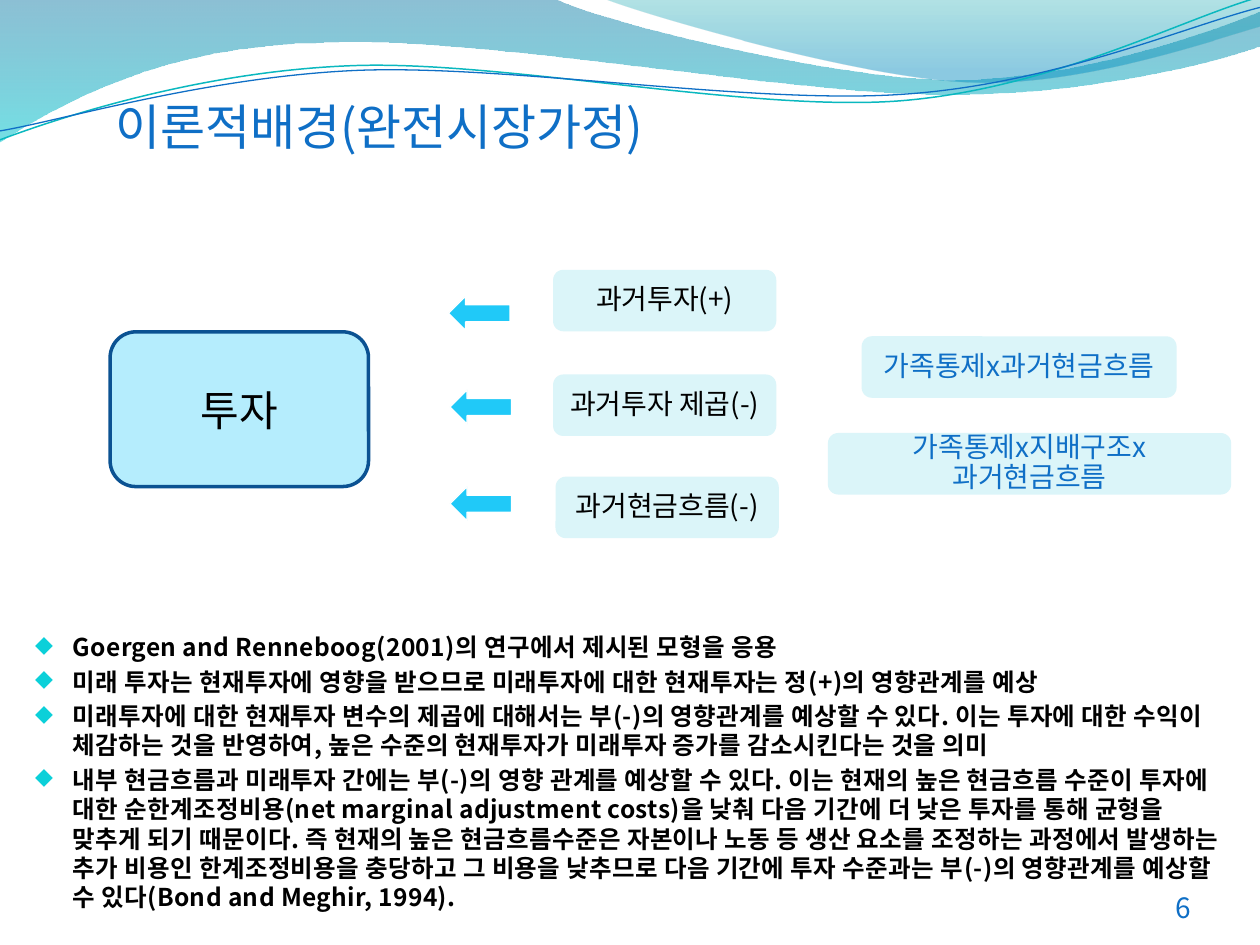
from lxml import etree
from pptx import Presentation
from pptx import util as u
from pptx.dml.color import RGBColor
from pptx.enum import shapes, text
from pptx.oxml.ns import qn

FONT = "Noto Sans CJK KR"
BLUE = "0F6FC6"
BLACK = "000000"
PALE = "DBF5F9"

UPPER_WAVE = (0, -0.03), [
    [(11.18, -0.03)],
    [(12.09, 0.43), (16.87, 1.6), (19.25, 1.6)],
    [(21.67, 1.6), (24.33, 0.66), (25.4, 0.23)],
    [(25.43, 0.91)],
    [(24.97, 1.12), (22.1, 1.93), (18.95, 1.9)],
    [(15.8, 1.9), (9.7, 0.71), (6.53, 0.86)],
    [(3.28, 0.89), (1.17, 2.11), (-0.03, 2.87)],
    [(0, -0.03)],
]
RIGHT_WAVE = (12.17, -0.03), [
    [(12.93, 0.28), (17.32, 1.57), (19.53, 1.65)],
    [(21.74, 1.75), (24.41, 0.81), (25.4, 0.53)],
    [(25.4, 0)],
    [(12.17, -0.03)],
]
TEAL_CURVE = (-0.05, 2.22), [
    [(1.19, 1.82), (4.02, 1.04), (7.05, 1.06)],
    [(10.05, 1.07), (15.02, 2.37), (18.08, 2.29)],
    [(21.14, 2.2), (23.87, 0.91), (25.41, 0.55)],
]
BLUE_CURVE = (-0.04, 2.04), [
    [(1.16, 1.9), (4.18, 1.15), (7.2, 1.16)],
    [(10.25, 1.18), (15.13, 2.23), (18.18, 2.16)],
    [(21.21, 2.1), (23.93, 1.06), (25.45, 0.75)],
]

CARDS = [
    ("과거현금흐름(-)", 11.2, 9.61, 4.5, BLACK),
    ("과거투자(+)", 11.15, 5.44, 4.5, BLACK),
    ("과거투자 제곱(-)", 11.15, 7.55, 4.5, BLACK),
    ("가족통제x과거현금흐름", 17.37, 6.78, 6.35, BLUE),
    ("가족통제x지배구조x과거현금흐름", 16.69, 8.73, 8.13, BLUE),
]
ARROWS = [(9.04, 5.97), (9.07, 7.86), (9.07, 9.81)]

NOTES = [
    "Goergen and Renneboog(2001)의 연구에서 제시된 모형을 응용",
    "미래 투자는 현재투자에 영향을 받으므로 미래투자에 대한 현재투자는 정(+)의 영향관계를 예상",
    "미래투자에 대한 현재투자 변수의 제곱에 대해서는 부(-)의 영향관계를 예상할 수 있다. "
    "이는 투자에 대한 수익이 체감하는 것을 반영하여, 높은 수준의 현재투자가 미래투자 증가를 "
    "감소시킨다는 것을 의미",
    "내부 현금흐름과 미래투자 간에는 부(-)의 영향 관계를 예상할 수 있다. 이는 현재의 높은 "
    "현금흐름 수준이 투자에 대한 순한계조정비용(net marginal adjustment costs)을 낮춰 다음 "
    "기간에 더 낮은 투자를 통해 균형을 맞추게 되기 때문이다. 즉 현재의 높은 현금흐름수준은 "
    "자본이나 노동 등 생산 요소를 조정하는 과정에서 발생하는 추가 비용인 한계조정비용을 "
    "충당하고 그 비용을 낮추므로 다음 기간에 투자 수준과는 부(-)의 영향관계를 예상할 수 "
    "있다(Bond and Meghir, 1994).",
]


def color(value):
    return RGBColor.from_string(value)


def add_outline(page, start, segments, close=False):
    points = [(u.Cm(x), u.Cm(y)) for segment in segments for x, y in segment]
    builder = page.shapes.build_freeform(*map(u.Cm, start))
    builder.add_line_segments(points, close=close)
    shape = builder.convert_to_shape()
    shape.shadow.inherit = False
    steps = iter(list(shape._element.iter(qn("a:lnTo"))))
    for segment in segments:
        lines = [next(steps) for _ in segment]
        if len(lines) == 3:
            bend = etree.Element(qn("a:cubicBezTo"))
            lines[0].addprevious(bend)
            for line in lines:
                bend.append(line[0])
                line.getparent().remove(line)
    return shape


def add_wave(page, outline, stops):
    wave = add_outline(page, *outline, close=True)
    wave.line.fill.background()
    wave.fill.gradient()
    wave.fill.gradient_angle = 270
    for stop, (position, value, _) in zip(wave.fill.gradient_stops, stops):
        stop.position = position
        stop.color.rgb = color(value)
    for node, (_, _, opacity) in zip(wave._element.iter(qn("a:srgbClr")), stops):
        etree.SubElement(node, qn("a:alpha"), val=str(opacity * 1000))


def add_curve(page, outline, value, width):
    curve = add_outline(page, *outline)
    curve.rotation = 357.3
    curve.fill.background()
    curve.line.color.rgb = color(value)
    curve.line.width = u.Pt(width)


def add_block(parent, kind, place, fill, line=None, width=0):
    block = parent.shapes.add_shape(kind, *map(u.Cm, place))
    block.shadow.inherit = False
    block.fill.solid()
    block.fill.fore_color.rgb = color(fill)
    if line:
        block.line.color.rgb = color(line)
        block.line.width = u.Pt(width)
    else:
        block.line.fill.background()
    return block


def set_margins(frame, left, top, right, bottom):
    frame.margin_left, frame.margin_top = u.Cm(left), u.Cm(top)
    frame.margin_right, frame.margin_bottom = u.Cm(right), u.Cm(bottom)


def write(frame, lines, size, value, align=text.PP_ALIGN.LEFT,
          anchor=text.MSO_ANCHOR.MIDDLE, bold=False):
    frame.word_wrap = True
    frame.vertical_anchor = anchor
    for index, line in enumerate(lines):
        para = frame.add_paragraph() if index else frame.paragraphs[0]
        para.add_run().text = line
        para.alignment = align
        font = para.font
        font.size, font.bold, font.name = u.Pt(size), bold, FONT
        font.color.rgb = color(value)
        etree.SubElement(para._p.pPr.find(qn("a:defRPr")), qn("a:ea"), typeface=FONT)


def add_text(page, place, *args, **options):
    box = page.shapes.add_textbox(*map(u.Cm, place))
    write(box.text_frame, *args, **options)
    return box.text_frame


def add_bullet(para):
    para.space_before = u.Pt(2.8)
    properties = para._p.pPr
    properties.set("marL", str(u.Cm(0.76)))
    properties.set("indent", str(-u.Cm(0.76)))
    tint = etree.Element(qn("a:buClr"))
    etree.SubElement(tint, qn("a:srgbClr"), val="0BD0D9")
    size = etree.Element(qn("a:buSzPct"), val="95000")
    face = etree.Element(qn("a:buFont"), typeface="OpenSymbol")
    mark = etree.Element(qn("a:buChar"), char="◆")
    defaults = properties.find(qn("a:defRPr"))
    defaults.set("spc", "20")
    for node in (tint, size, face, mark):
        defaults.addprevious(node)


def add_card(page, label, left, top, width, value):
    group = page.shapes.add_group_shape()
    add_block(group, shapes.MSO_SHAPE.ROUNDED_RECTANGLE, (left, top, width, 1.24), PALE)
    side = width * 0.016
    panel = add_block(group, shapes.MSO_SHAPE.RECTANGLE,
                      (left + side, top + 0.06, width - 2 * side, 1.12), PALE)
    set_margins(panel.text_frame, 0.17, 0.17, 0.17, 0.17)
    write(panel.text_frame, [label], 16, value, text.PP_ALIGN.CENTER)
    panel.text_frame.paragraphs[0].line_spacing = 0.9


def add_arrow(page, left, top):
    arrow = add_block(page, shapes.MSO_SHAPE.RIGHT_ARROW, (left, top, 1.24, 0.69),
                      "20C9F8", "FFFFFF", 0.75)
    arrow.rotation = 180


def main():
    deck = Presentation()
    deck.slide_width, deck.slide_height = u.Cm(25.4), u.Cm(19.05)
    page = deck.slides.add_slide(deck.slide_layouts[6])

    add_wave(page, UPPER_WAVE, [(0, "0074A1", 45), (1, "00C6CF", 55)])
    add_wave(page, RIGHT_WAVE, [(0, "00A1A9", 30), (0.8, "008BBF", 45)])
    add_curve(page, TEAL_CURVE, "0AB8BF", 0.85)
    add_curve(page, BLUE_CURVE, BLUE, 0.75)

    title = add_text(page, (1.68, 1.02, 20.62, 2.13), ["이론적배경(완전시장가정)"], 28, BLUE,
                     anchor=text.MSO_ANCHOR.BOTTOM)
    set_margins(title, 0.64, 0.13, 0, 0.02)
    number = add_text(page, (22.32, 18.2, 1.68, 0.43), ["6"], 16, BLUE,
                      text.PP_ALIGN.RIGHT, text.MSO_ANCHOR.BOTTOM)
    set_margins(number, 0, 0, 0, 0)
    notes = add_text(page, (0.46, 12.57, 24.71, 5.99), NOTES, 14, BLACK, bold=True)
    for para in notes.paragraphs:
        add_bullet(para)

    investment = add_block(page, shapes.MSO_SHAPE.ROUNDED_RECTANGLE, (2.22, 6.69, 5.21, 3.12),
                           "B5EDFD", "0B5292", 2)
    write(investment.text_frame, ["투자"], 24, BLACK, text.PP_ALIGN.CENTER)
    for card in CARDS:
        add_card(page, *card)
    for arrow in ARROWS:
        add_arrow(page, *arrow)

    deck.save("out.pptx")


if __name__ == "__main__":
    main()
